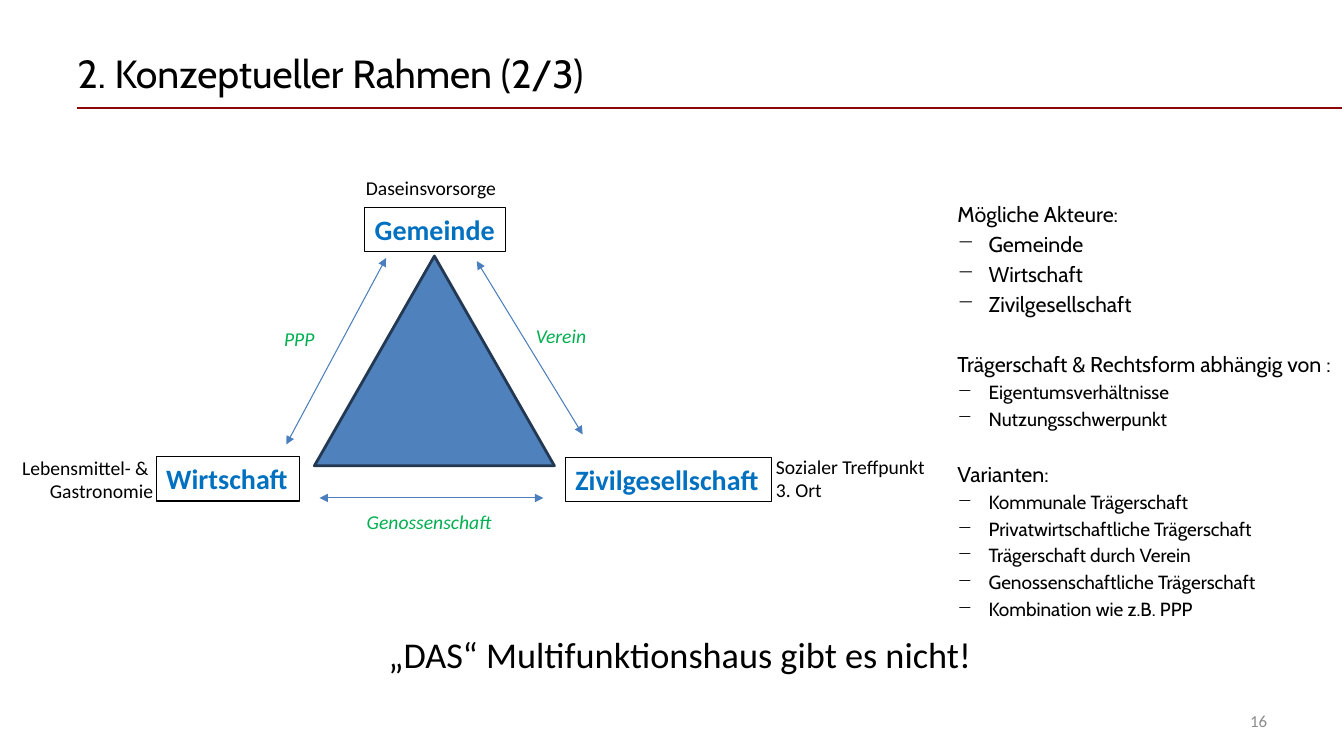
from lxml import etree
from pptx import Presentation
from pptx.dml.color import RGBColor
from pptx.enum import shapes, text
from pptx.oxml.ns import qn
from pptx.util import Pt

# Places are in points: left, top, width, height
TITLE = "2. Konzeptueller Rahmen (2/3)"
SLOGAN = "„DAS“ Multifunktionshaus gibt es nicht!"
PAGE = "16"

ACTORS = [
    ("Wirtschaft", (111.6, 326.2, 102.2, 31.7)),
    ("Gemeinde", (260.6, 148.3, 100.8, 31.7)),
    ("Zivilgesellschaft", (403.9, 326.9, 146.9, 31.7)),
]
FORMS = [
    ("Verein", (375.8, 227.5, 50.4, 24.5)),
    ("Genossenschaft", (254.9, 360.7, 105.1, 24.5)),
    ("PPP", (195.8, 229.7, 36.7, 24.5)),
]
ROLES = [
    (["Daseinsvorsorge"], (254.2, 122.4, 108.7, 24.5), "l"),
    (["Lebensmittel- & ", "Gastronomie"], (7.2, 321.8, 109.4, 41), "r"),
    (["Sozialer Treffpunkt", "3. Ort"], (547.2, 321.1, 121.7, 41), "l"),
]
TRIANGLE = (224.6, 182.9, 171.4, 149.8)
ARROWS = [
    (275.8, 184.3, 204.5, 317.5),
    (340.6, 186.5, 416.2, 310.3),
    (388.1, 355.7, 228.2, 355.7),
]
# Heading, space above it, size of its items, items
LISTS = [
    ("Mögliche Akteure:", 0, 15.3,
     ["Gemeinde", "Wirtschaft", "Zivilgesellschaft"]),
    ("Trägerschaft & Rechtsform abhängig von :", 24.5, 13.6,
     ["Eigentumsverhältnisse", "Nutzungsschwerpunkt"]),
    ("Varianten:", 22.2, 13.6,
     ["Kommunale Trägerschaft", "Privatwirtschaftliche Trägerschaft",
      "Trägerschaft durch Verein", "Genossenschaftliche Trägerschaft",
      "Kombination wie z.B. PPP"]),
]
HEAD = 15.3
ALIGN = {"l": text.PP_ALIGN.LEFT, "c": text.PP_ALIGN.CENTER,
         "r": text.PP_ALIGN.RIGHT}

deck = Presentation()
deck.slide_width, deck.slide_height = Pt(960), Pt(540)
slide = deck.slides.add_slide(deck.slide_layouts[6])
art = slide.shapes


def color(code):
    return RGBColor.from_string(code)


def pts(place):
    return [Pt(v) for v in place]


def write(para, words, size, code="000000", face="Calibri", bold=False,
          slant=False):
    run = para.add_run()
    run.text = words
    font = run.font
    font.size, font.name = Pt(size), face
    font.bold, font.italic = bold, slant
    font.color.rgb = color(code)


def fill_text(shape, lines, size, align="l", wrap=False, middle=False, **look):
    frame = shape.text_frame
    frame.word_wrap = wrap
    anchor = text.MSO_ANCHOR
    frame.vertical_anchor = anchor.MIDDLE if middle else anchor.TOP
    for i, line in enumerate(lines):
        para = frame.add_paragraph() if i else frame.paragraphs[0]
        para.alignment = ALIGN[align]
        write(para, line, size, **look)


def label(place, lines, size, **look):
    fill_text(art.add_textbox(*pts(place)), lines, size, **look)


def link(ends, code, width, heads=False):
    line = art.add_connector(shapes.MSO_CONNECTOR.STRAIGHT, *pts(ends))
    line.line.color.rgb = color(code)
    line.line.width = Pt(width)
    if heads:
        stroke = line.line._get_or_add_ln()
        for end in ("a:headEnd", "a:tailEnd"):
            etree.SubElement(stroke, qn(end), type="triangle")
    etree.SubElement(line._element.spPr, qn("a:effectLst"))


def indent(para, left, first=0, mark=None):
    props = para._p.get_or_add_pPr()
    props.set("marL", str(Pt(left)))
    props.set("indent", str(Pt(first)))
    if mark:
        etree.SubElement(props, qn("a:buChar"), char=mark)


def block(kind, place, code, width):
    shape = art.add_shape(kind, *pts(place))
    shape.shadow.inherit = False
    shape.line.color.rgb = color(code)
    shape.line.width = Pt(width)
    return shape


def sidebar():
    box = art.add_textbox(*pts((656.6, 140, 303, 310)))
    frame = box.text_frame
    frame.word_wrap = True
    frame.margin_right = 0
    para = frame.paragraphs[0]
    for head, gap, size, items in LISTS:
        if gap:
            para = frame.add_paragraph()
        para.space_before = Pt(gap)
        indent(para, 20.2)
        write(para, head, HEAD, face="Cabin")
        for item in items:
            para = frame.add_paragraph()
            para.space_before = Pt(size * 0.2)
            indent(para, 42.5, -22.3, "−")
            write(para, item, size, face="Cabin")


link((54.7, 77, 958.3, 77), "8C070A", 1.25)
label((48.2, 21.6, 864, 61.2), [TITLE], 28, wrap=True, middle=True,
      face="Cabin")

for name, place in FORMS:
    label(place, [name], 14, code="00B050", slant=True)
for lines, place, side in ROLES:
    label(place, lines, 14, align=side)

kinds = shapes.MSO_SHAPE
core = block(kinds.ISOSCELES_TRIANGLE, TRIANGLE, "233953", 2)
core.fill.solid()
core.fill.fore_color.rgb = color("4F81BD")

for name, place in ACTORS:
    box = block(kinds.RECTANGLE, place, "000000", 0.75)
    box.fill.background()
    fill_text(box, [name], 20, code="0070C0", bold=True)
for ends in ARROWS:
    link(ends, "4B7EBC", 0.75, heads=True)

sidebar()
label((71.3, 447.8, 828.7, 40), [SLOGAN], 25.9, align="c", wrap=True)
label((688.3, 500.4, 223.9, 28.8), [PAGE], 12, align="r", wrap=True,
      middle=True, code="8C8C8C")

deck.save("out.pptx")
